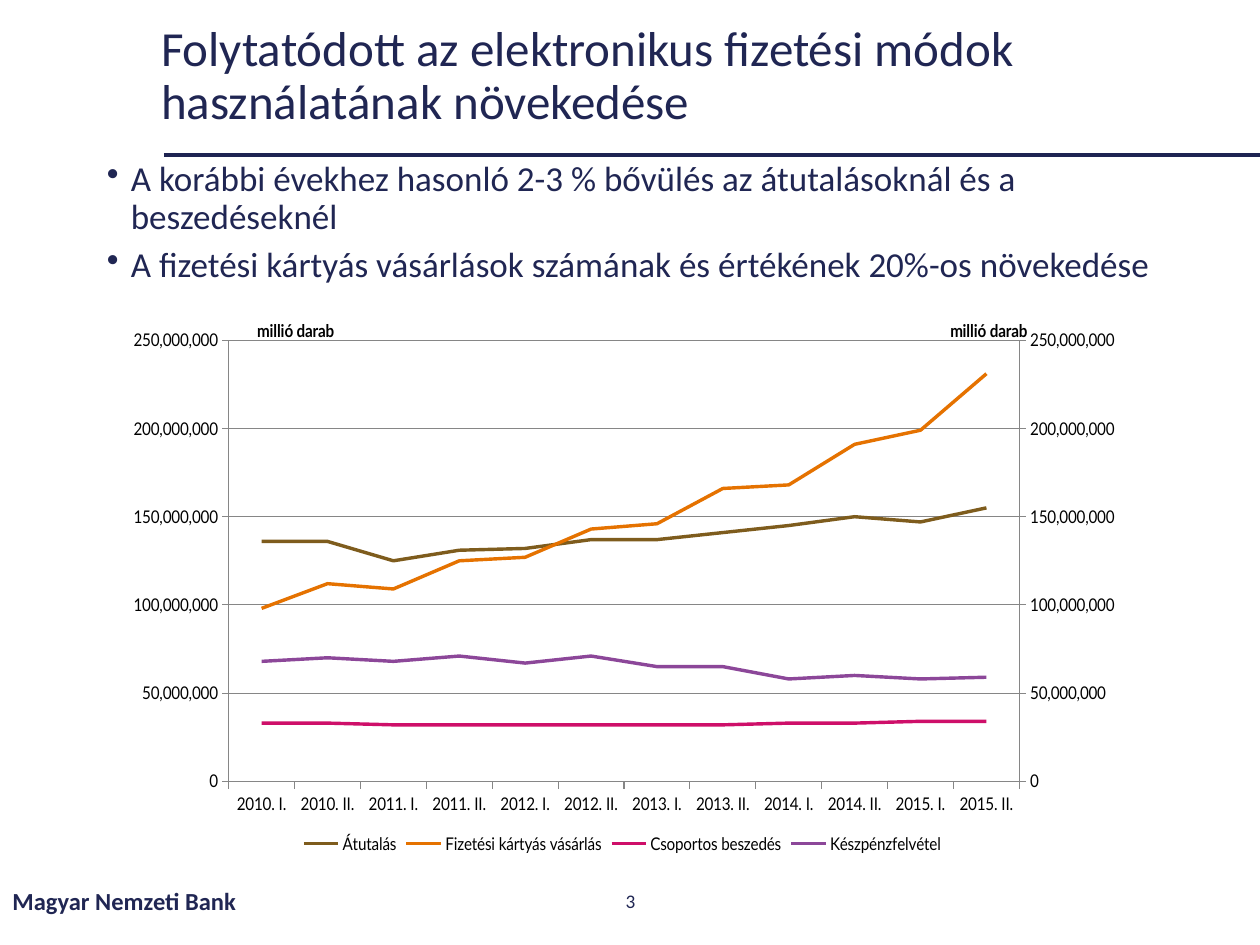
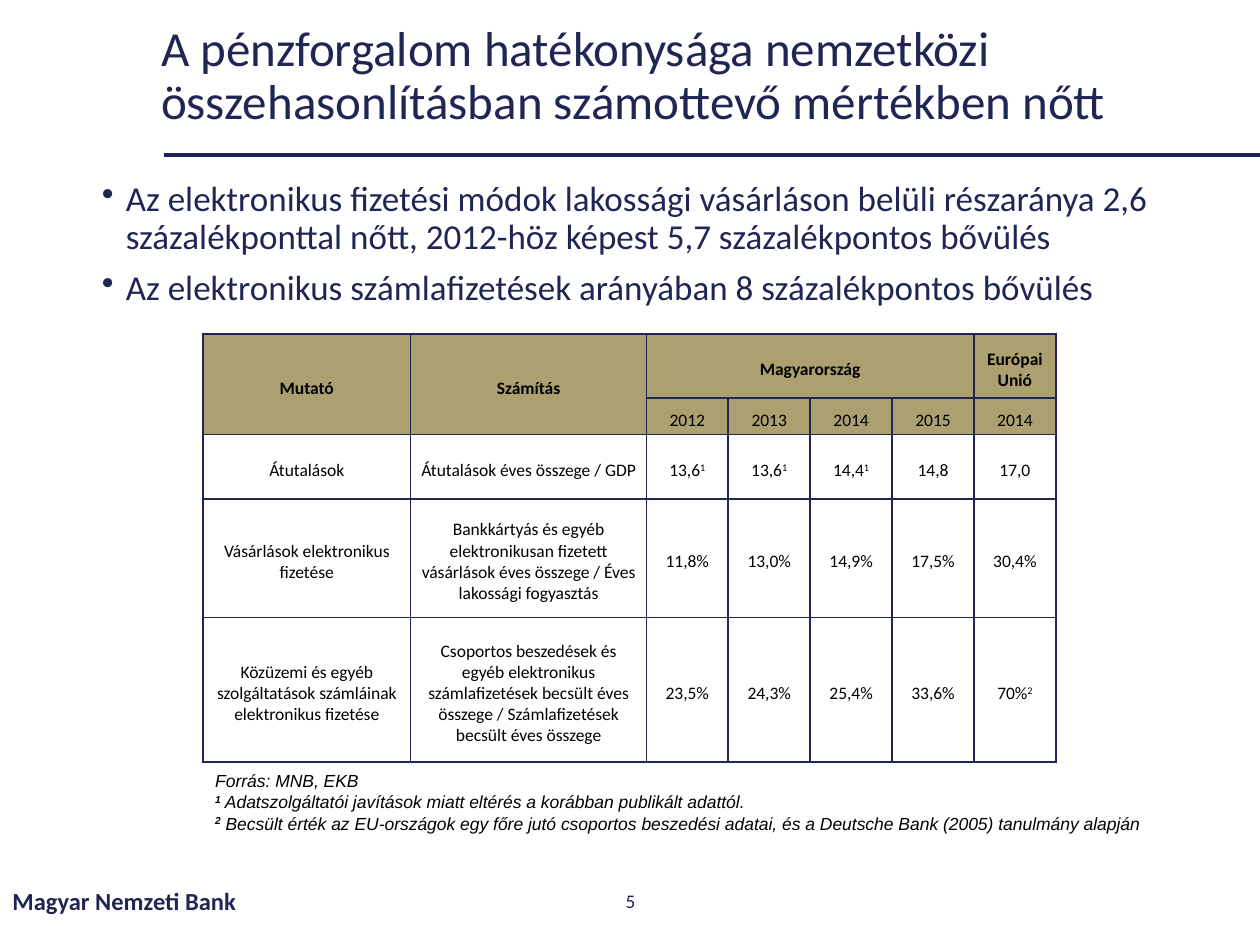
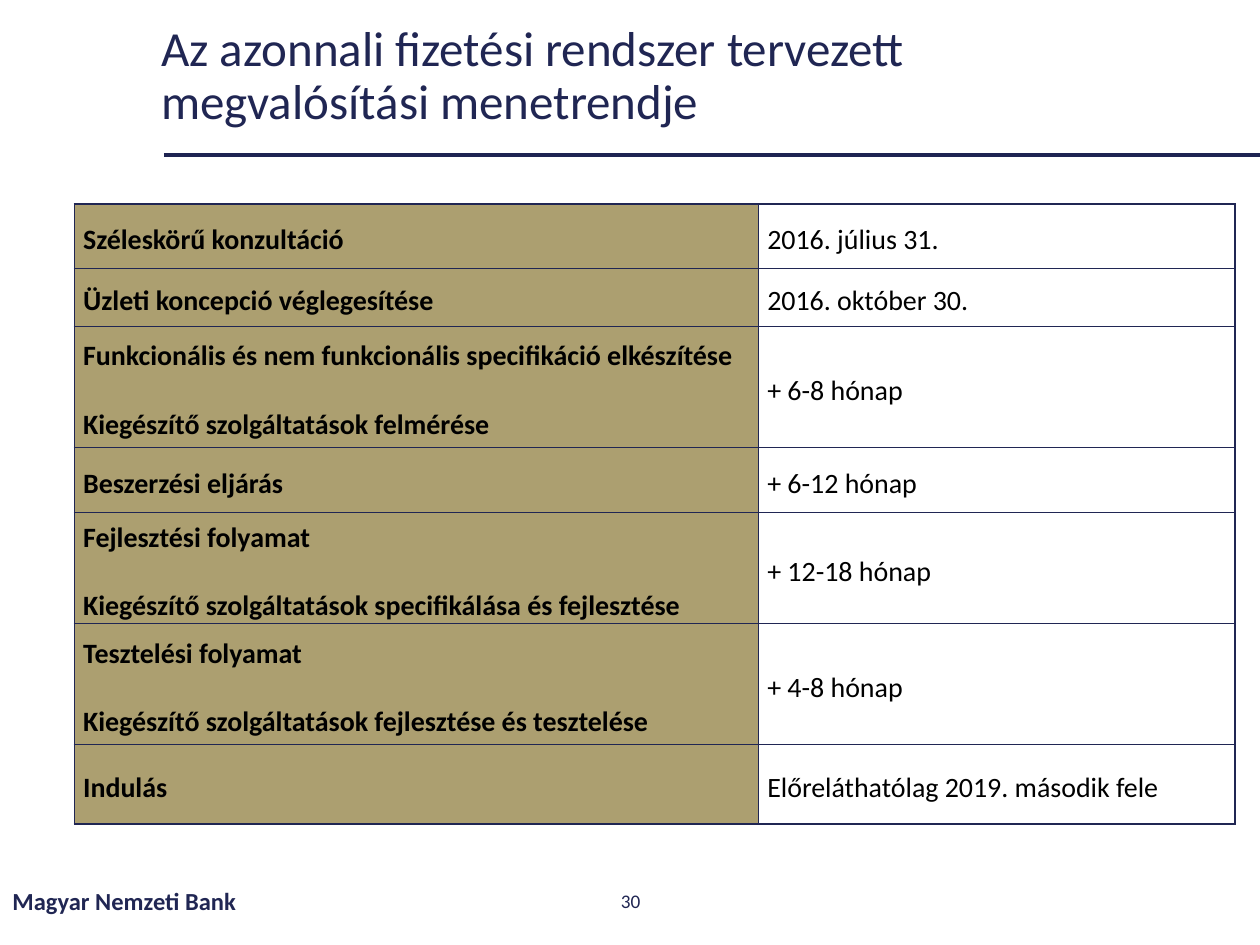
from copy import deepcopy
from dataclasses import dataclass

from pptx import Presentation
from pptx.chart.data import CategoryChartData
from pptx.dml.color import RGBColor
from pptx.enum.chart import XL_CHART_TYPE, XL_LEGEND_POSITION, XL_MARKER_STYLE, XL_TICK_MARK
from pptx.enum.shapes import MSO_CONNECTOR
from pptx.enum.text import MSO_ANCHOR, PP_ALIGN
from pptx.oxml import parse_xml
from pptx.oxml.ns import nsdecls, qn
from pptx.util import Inches, Pt


@dataclass(frozen=True)
class Theme:
    navy: str = "202653"
    rule: str = "1E2452"
    black: str = "000000"
    gold: str = "AC9F70"
    grey: str = "868686"
    body: str = "Calibri"
    graph: str = "Lato"
    note: str = "Arial"
    head: int = 28
    text: int = 20
    step: int = 16
    brand: int = 14
    page: int = 11
    small: int = 10


T = Theme()

# A caret switches superscript on and off.
GROWTH = {
    "title": "Folytatódott az elektronikus fizetési módok használatának növekedése",
    "page": 3,
    "points": [
        "A korábbi évekhez hasonló 2-3 % bővülés az átutalásoknál és a beszedéseknél",
        "A fizetési kártyás vásárlások számának és értékének 20%-os növekedése",
    ],
}
UNIT = "millió darab"
HALVES = [f"{year}. {half}." for year in range(2010, 2016) for half in ("I", "II")]
MILLION = 1_000_000
TOP = 250 * MILLION
SERIES = [
    ("Átutalás", "7E5C1D", [136, 136, 125, 131, 132, 137, 137, 141, 145, 150, 147, 155]),
    ("Fizetési kártyás vásárlás", "E57200",
     [98, 112, 109, 125, 127, 143, 146, 166, 168, 191, 199, 231]),
    ("Csoportos beszedés", "CE0F69", [33, 33, 32, 32, 32, 32, 32, 32, 33, 33, 34, 34]),
    ("Készpénzfelvétel", "8C4799", [68, 70, 68, 71, 67, 71, 65, 65, 58, 60, 58, 59]),
]

RATIOS = {
    "title": "A pénzforgalom hatékonysága nemzetközi összehasonlításban számottevő mértékben nőtt",
    "page": 5,
    "points": [
        "Az elektronikus fizetési módok lakossági vásárláson belüli részaránya 2,6 "
        "százalékponttal nőtt, 2012-höz képest 5,7 százalékpontos bővülés",
        "Az elektronikus számlafizetések arányában 8 százalékpontos bővülés",
    ],
    "rows": [
        ["Mutató", "Számítás", "Magyarország", None, None, None, "Európai Unió"],
        [None, None, "2012", "2013", "2014", "2015", "2014"],
        ["Átutalások", "Átutalások éves összege / GDP",
         "13,6^1", "13,6^1", "14,4^1", "14,8", "17,0"],
        ["Vásárlások elektronikus fizetése",
         "Bankkártyás és egyéb elektronikusan fizetett vásárlások éves összege / "
         "Éves lakossági fogyasztás",
         "11,8%", "13,0%", "14,9%", "17,5%", "30,4%"],
        ["Közüzemi és egyéb szolgáltatások számláinak elektronikus fizetése",
         "Csoportos beszedések és egyéb elektronikus számlafizetések becsült éves összege / "
         "Számlafizetések becsült éves összege",
         "23,5%", "24,3%", "25,4%", "33,6%", "70%^2"],
    ],
    "spans": [((0, 0), (1, 0)), ((0, 1), (1, 1)), ((0, 2), (0, 5))],
    "notes": [
        "Forrás: MNB, EKB",
        "^1^ Adatszolgáltatói javítások miatt eltérés a korábban publikált adattól.",
        "^2^ Becsült érték az EU-országok egy főre jutó csoportos beszedési adatai, "
        "és a Deutsche Bank (2005) tanulmány alapján",
    ],
}

PLAN = {
    "title": "Az azonnali fizetési rendszer tervezett megvalósítási menetrendje",
    "page": 30,
    "rows": [
        ["Széleskörű konzultáció", "2016. július 31."],
        ["Üzleti koncepció véglegesítése", "2016. október 30."],
        [["Funkcionális és nem funkcionális specifikáció elkészítése",
          "Kiegészítő szolgáltatások felmérése"], "+ 6-8 hónap"],
        ["Beszerzési eljárás", "+ 6-12 hónap"],
        [["Fejlesztési folyamat",
          "Kiegészítő szolgáltatások specifikálása és fejlesztése"], "+ 12-18 hónap"],
        [["Tesztelési folyamat",
          "Kiegészítő szolgáltatások fejlesztése és tesztelése"], "+ 4-8 hónap"],
        ["Indulás", "Előreláthatólag 2019. második fele"],
    ],
}


def rgb(code):
    return RGBColor.from_string(code)


def write(frame, text, size=T.text, font=T.body, color=T.navy, bold=False, italic=False,
          align=PP_ALIGN.LEFT, lead=None, before=0, after=0, bullet=False):
    """Fill a frame with one paragraph per line of text."""
    lines = [text] if isinstance(text, str) else text
    for i, line in enumerate(lines):
        para = frame.paragraphs[0] if i == 0 else frame.add_paragraph()
        if bullet:
            props = para._p.get_or_add_pPr()
            props.set("marL", str(Inches(0.19)))
            props.set("indent", str(-Inches(0.19)))
            props.append(parse_xml(f'<a:buChar {nsdecls("a")} char="•"/>'))
        para.alignment = align
        if lead:
            para.line_spacing = lead
        para.space_before = Pt(before if i else 0)
        para.space_after = Pt(after)
        for j, part in enumerate(line.split("^")):
            if not part:
                continue
            run = para.add_run()
            run.text = part
            face = run.font
            face.size, face.name, face.italic = Pt(size), font, italic
            face.color.rgb = rgb(color)
            raised = j % 2 == 1
            face.bold = bold or (raised and italic)
            if raised:
                face._element.set("baseline", "30000")


def add_box(slide, text, x, y, w, h, anchor=MSO_ANCHOR.MIDDLE, **style):
    frame = slide.shapes.add_textbox(Inches(x), Inches(y), Inches(w), Inches(h)).text_frame
    frame.word_wrap = True
    frame.vertical_anchor = anchor
    write(frame, text, **style)


def add_page(deck, data):
    """Start a slide with its title, rule and footer."""
    slide = deck.slides.add_slide(deck.slide_layouts[6])
    rule = slide.shapes.add_connector(
        MSO_CONNECTOR.STRAIGHT, Inches(1.3), Inches(1.23), Inches(10), Inches(1.23))
    rule.line.color.rgb = rgb(T.rule)
    rule.line.width = Pt(2.25)
    rule._element.spPr.append(parse_xml(f'<a:effectLst {nsdecls("a")}/>'))
    add_box(slide, data["title"], 1.18, 0, 8.19, 1.23, size=T.head, lead=0.9)
    add_box(slide, "Magyar Nemzeti Bank", 0, 6.95, 3.38, 0.4, size=T.brand, bold=True)
    add_box(slide, str(data["page"]), 3.88, 6.95, 2.25, 0.4, size=T.page,
            align=PP_ALIGN.CENTER)
    return slide


def add_points(slide, points, x, y, w, h, before):
    add_box(slide, points, x, y, w, h, anchor=MSO_ANCHOR.TOP, lead=0.9,
            before=before, bullet=True)


def edge(cell):
    props = cell._tc.get_or_add_tcPr()
    for i, side in enumerate(("lnL", "lnR", "lnT", "lnB")):
        props.insert(i, parse_xml(
            f'<a:{side} {nsdecls("a")} w="{Pt(1)}"><a:solidFill>'
            f'<a:srgbClr val="{T.navy}"/></a:solidFill></a:{side}>'))


def add_grid(slide, rows, x, y, widths, heights, look, spans=()):
    """Draw a table; look(row, col) gives whether a cell is gold, and its text style."""
    grid = slide.shapes.add_table(
        len(rows), len(widths), Inches(x), Inches(y),
        Inches(sum(widths)), Inches(sum(heights))).table
    grid.first_row = grid.horz_banding = False
    for col, w in zip(grid.columns, widths):
        col.width = Inches(w)
    for row, h in zip(grid.rows, heights):
        row.height = Inches(h)
    for start, end in spans:
        grid.cell(*start).merge(grid.cell(*end))
    for r, row in enumerate(rows):
        for c, text in enumerate(row):
            cell = grid.cell(r, c)
            gold, style = look(r, c)
            if gold:
                cell.fill.solid()
                cell.fill.fore_color.rgb = rgb(T.gold)
            else:
                cell.fill.background()
            edge(cell)
            cell.vertical_anchor = MSO_ANCHOR.MIDDLE
            cell.margin_left = cell.margin_right = Inches(0.07)
            cell.margin_top, cell.margin_bottom = Inches(0.06), 0
            if text:
                write(cell.text_frame, text, color=T.black, **style)


def place(owner, inner=False, **spots):
    """Set the manual layout of a chart part, in shares of the chart."""
    old = owner.find(qn("c:layout"))
    if old is None:
        old = parse_xml(f'<c:layout {nsdecls("c")}/>')
        owner.insert(0, old)
    target = '<c:layoutTarget val="inner"/>' if inner else ""
    modes = "".join(f'<c:{k}Mode val="edge"/>' for k in "xy")
    sizes = "".join(f'<c:{k} val="{v}"/>' for k, v in spots.items())
    owner.replace(old, parse_xml(
        f'<c:layout {nsdecls("c")}><c:manualLayout>{target}{modes}{sizes}'
        '</c:manualLayout></c:layout>'))


def split_axis(chart):
    """Move the last series to a second value axis on the right."""
    area = chart._chartSpace.chart.plotArea
    left = area.find(qn("c:lineChart"))
    right = deepcopy(left)
    left.remove(left.findall(qn("c:ser"))[-1])
    for ser in right.findall(qn("c:ser"))[:-1]:
        right.remove(ser)
    left.addnext(right)
    ids = {"c:catAx": "5001", "c:valAx": "5002"}
    for node, number in zip(right.findall(qn("c:axId")), ids.values()):
        node.set("val", number)
    last = area.find(qn("c:valAx"))
    cat, val = (deepcopy(area.find(qn(tag))) for tag in ids)
    for axis, own, other in ((cat, "5001", "5002"), (val, "5002", "5001")):
        axis.find(qn("c:axId")).set("val", own)
        axis.find(qn("c:crossAx")).set("val", other)
        last.addnext(axis)
        last = axis
    cat.find(qn("c:delete")).set("val", "1")
    val.find(qn("c:axPos")).set("val", "r")
    val.find(qn("c:crosses")).set("val", "max")
    val.remove(val.find(qn("c:majorGridlines")))
    place(val.find(qn("c:title")), x=0.88, y=0.02)


def add_lines(slide):
    data = CategoryChartData(number_format="#,##0")
    data.categories = HALVES
    for name, _, values in SERIES:
        data.add_series(name, [v * MILLION for v in values])
    chart = slide.shapes.add_chart(
        XL_CHART_TYPE.LINE, Inches(1.06), Inches(2.41), Inches(7.8), Inches(4.41), data).chart
    chart.has_title = False
    chart.font.name, chart.font.size = T.graph, Pt(T.small)
    chart.font.color.rgb = rgb(T.black)
    chart.has_legend = True
    chart.legend.position = XL_LEGEND_POSITION.BOTTOM
    chart.legend.include_in_layout = False
    plot = chart.plots[0]
    plot.vary_by_categories = False
    for ser, (_, color, _) in zip(plot.series, SERIES):
        ser.smooth = False
        ser.marker.style = XL_MARKER_STYLE.NONE
        ser.format.line.color.rgb = rgb(color)
        ser.format.line.width = Pt(2.25)
    scale = chart.value_axis
    scale.minimum_scale, scale.maximum_scale, scale.major_unit = 0, TOP, TOP / 5
    scale.tick_labels.number_format = "#,##0"
    scale.tick_labels.number_format_is_linked = False
    scale.has_major_gridlines = True
    for axis in (chart.category_axis, scale):
        axis.major_tick_mark = XL_TICK_MARK.OUTSIDE
        axis.minor_tick_mark = XL_TICK_MARK.NONE
        axis.format.line.color.rgb = rgb(T.grey)
    scale.major_gridlines.format.line.color.rgb = rgb(T.grey)
    label = scale.axis_title
    write(label.text_frame, UNIT, size=T.small, font=T.graph, color=T.black, bold=True)
    turn = label.text_frame._txBody.find(qn("a:bodyPr"))
    turn.set("rot", "0")
    turn.set("vert", "horz")
    place(label._element, x=0.07, y=0.02)
    place(chart._chartSpace.chart.plotArea, inner=True, x=0.04, y=0.066, w=0.924, h=0.794)
    split_axis(chart)


def ratio_look(row, col):
    return row < 2, dict(size=T.small, bold=row == 0, align=PP_ALIGN.CENTER, after=3)


def plan_look(row, col):
    return col == 0, dict(size=T.step, bold=col == 0, before=19.5)


def main():
    deck = Presentation()
    deck.slide_width, deck.slide_height = Inches(10), Inches(7.5)

    slide = add_page(deck, GROWTH)
    add_points(slide, GROWTH["points"], 0.75, 1.23, 8.59, 5.71, before=6)
    add_lines(slide)

    slide = add_page(deck, RATIOS)
    add_points(slide, RATIOS["points"], 0.71, 1.39, 8.62, 5.43, before=7.5)
    add_grid(slide, RATIOS["rows"], 1.61, 2.65, [1.65, 1.87] + [0.65] * 5,
             [0.51, 0.29, 0.51, 0.94, 1.15], ratio_look, RATIOS["spans"])
    add_box(slide, RATIOS["notes"], 1.61, 6.06, 7.87, 0.61, size=T.small, font=T.note,
            color=T.black, italic=True, align=PP_ALIGN.JUSTIFY)

    slide = add_page(deck, PLAN)
    add_grid(slide, PLAN["rows"], 0.59, 1.62, [5.43, 3.78],
             [0.51, 0.46, 0.96, 0.52, 0.88, 0.96, 0.63], plan_look)

    deck.save("out.pptx")


if __name__ == "__main__":
    main()
